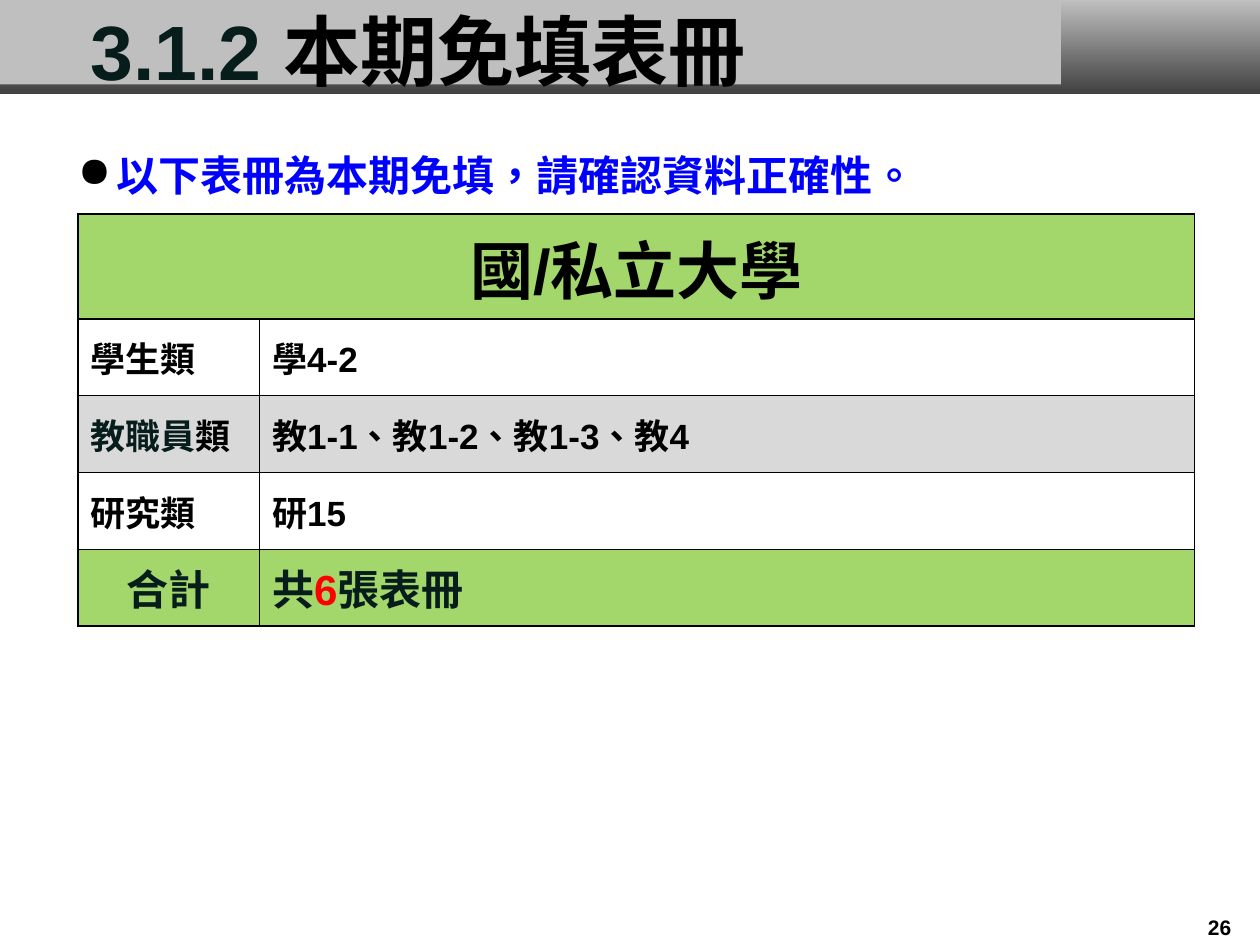
from dataclasses import dataclass

from lxml import etree
from pptx import Presentation
from pptx.dml.color import RGBColor
from pptx.enum.shapes import MSO_SHAPE
from pptx.enum.text import MSO_ANCHOR, PP_ALIGN
from pptx.oxml.ns import qn
from pptx.util import Inches, Pt

RECTANGLE = MSO_SHAPE.RECTANGLE
MIDDLE = MSO_ANCHOR.MIDDLE
LEFT, CENTER = PP_ALIGN.LEFT, PP_ALIGN.CENTER
BORDER_SIDES = ("a:lnL", "a:lnR", "a:lnT", "a:lnB")


@dataclass(frozen=True)
class Theme:
    latin: str = "Arial"
    asian: str = "Noto Sans CJK SC"
    black: str = "000000"
    white: str = "FFFFFF"
    ink: str = "071D1C"
    blue: str = "0000FF"
    red: str = "FF0000"
    green: str = "A4D76B"
    stripe: str = "D9D9D9"
    band: str = "BFBFBF"
    band_dark: str = "404040"
    title_size: int = 44
    heading_size: int = 36
    lead_size: int = 24
    body_size: int = 20
    number_size: int = 12
    border_width: int = 1


THEME = Theme()


@dataclass(frozen=True)
class Box:
    """An area on the slide grid of 100 columns by 75 rows, 0.1 inch each."""
    column: float
    row: float
    columns: float
    rows: float

    def inner(self, column, row, columns, rows):
        return Box(self.column + column, self.row + row, columns, rows)

    def lengths(self):
        return [grid(n) for n in (self.column, self.row, self.columns, self.rows)]


def grid(count):
    return Inches(count / 10)


def color(value):
    return RGBColor.from_string(value)


def write(text_frame, runs, size, alignment=LEFT):
    """Write one bold paragraph from (text, colour) runs."""
    paragraph = text_frame.paragraphs[0]
    paragraph.alignment = alignment
    for text, run_color in runs:
        run = paragraph.add_run()
        run.text = text
        formats = {"name": THEME.latin, "size": Pt(size), "bold": True}
        for name, value in formats.items():
            setattr(run.font, name, value)
        run.font.color.rgb = color(run_color)
        properties = run._r.get_or_add_rPr()
        properties.set("lang", "zh-TW")
        etree.SubElement(properties, qn("a:ea")).set("typeface", THEME.asian)
    return paragraph


def add_text(slide, box, runs, size, alignment=LEFT):
    text_frame = slide.shapes.add_textbox(*box.lengths()).text_frame
    text_frame.word_wrap = True
    text_frame.vertical_anchor = MIDDLE
    return write(text_frame, runs, size, alignment)


def add_band(slide, box):
    shape = slide.shapes.add_shape(RECTANGLE, *box.lengths())
    shape.shadow.inherit = False
    shape.line.fill.background()
    return shape.fill


def add_header(slide, box):
    gradient = add_band(slide, box)
    gradient.gradient()
    gradient.gradient_angle = 270
    for stop, value in zip(gradient.gradient_stops, (THEME.band, THEME.band_dark)):
        stop.color.rgb = color(value)
    panel = add_band(slide, box.inner(0, 0, 84.2, 6.7))
    panel.solid()
    panel.fore_color.rgb = color(THEME.band)
    add_text(slide, box.inner(6.2, 0.6, 87.9, 6.7),
             [("3.1.2 ", THEME.ink), ("本期免填表冊", THEME.black)], THEME.title_size)


def add_lead(slide, box):
    paragraph = add_text(slide, box, [("以下表冊為本期免填，請確認資料正確性。", THEME.blue)],
                         THEME.lead_size)
    properties = paragraph._p.get_or_add_pPr()
    indent = Inches(0.31)
    properties.set("marL", str(indent))
    properties.set("indent", str(-indent))
    bullet_color = etree.SubElement(properties, qn("a:buClr"))
    etree.SubElement(bullet_color, qn("a:srgbClr")).set("val", THEME.black)
    etree.SubElement(properties, qn("a:buChar")).set("char", "●")


def add_borders(cell):
    properties = cell._tc.get_or_add_tcPr()
    for index, side in enumerate(BORDER_SIDES):
        line = etree.Element(qn(side), w=str(Pt(THEME.border_width)))
        fill = etree.SubElement(line, qn("a:solidFill"))
        etree.SubElement(fill, qn("a:srgbClr")).set("val", THEME.black)
        properties.insert(index, line)


def fill_cell(cell, runs, size, fill, alignment=LEFT):
    cell.vertical_anchor = MIDDLE
    cell.fill.solid()
    cell.fill.fore_color.rgb = color(fill)
    add_borders(cell)
    write(cell.text_frame, runs, size, alignment)


def add_form_table(slide, box):
    black, ink = THEME.black, THEME.ink
    rows = [
        ([("學生類", black)], [("學4-2", black)], THEME.white),
        ([("教職員", ink), ("類", black)],
         [("教1-1、教1-2、教1-3、教4", black)], THEME.stripe),
        ([("研究類", black)], [("研15", black)], THEME.white),
        ([("合計", ink)],
         [("共", ink), ("6", THEME.red), ("張表冊", ink)], THEME.green),
    ]
    table = slide.shapes.add_table(len(rows) + 1, 2, *box.lengths()).table
    label_columns, heading_rows = 14.4, 8.3
    table.columns[0].width = grid(label_columns)
    table.columns[1].width = grid(box.columns - label_columns)
    for row in table.rows:
        row.height = grid((box.rows - heading_rows) / len(rows))
    table.rows[0].height = grid(heading_rows)

    heading, heading_end = table.cell(0, 0), table.cell(0, 1)
    heading.merge(heading_end)
    fill_cell(heading, [("國/私立大學", black)], THEME.heading_size, THEME.green, CENTER)
    add_borders(heading_end)
    for index, (label, forms, fill) in enumerate(rows, start=1):
        is_total = index == len(rows)
        size = THEME.lead_size if is_total else THEME.body_size
        fill_cell(table.cell(index, 0), label, size, fill, CENTER if is_total else LEFT)
        fill_cell(table.cell(index, 1), forms, size, fill)


def add_slide_number(slide, box):
    add_text(slide, box, [("26", THEME.black)], THEME.number_size, CENTER)


def main():
    presentation = Presentation()
    presentation.slide_width, presentation.slide_height = grid(100), grid(75)
    slide = presentation.slides.add_slide(presentation.slide_layouts[6])
    add_header(slide, Box(0, 0, 100, 7.5))
    add_form_table(slide, Box(6.2, 17, 88.6, 32.7))
    add_lead(slide, Box(5.2, 10.9, 66.8, 5.9))
    add_slide_number(slide, Box(93.6, 72.2, 6.4, 2.8))
    presentation.save("out.pptx")


if __name__ == "__main__":
    main()
